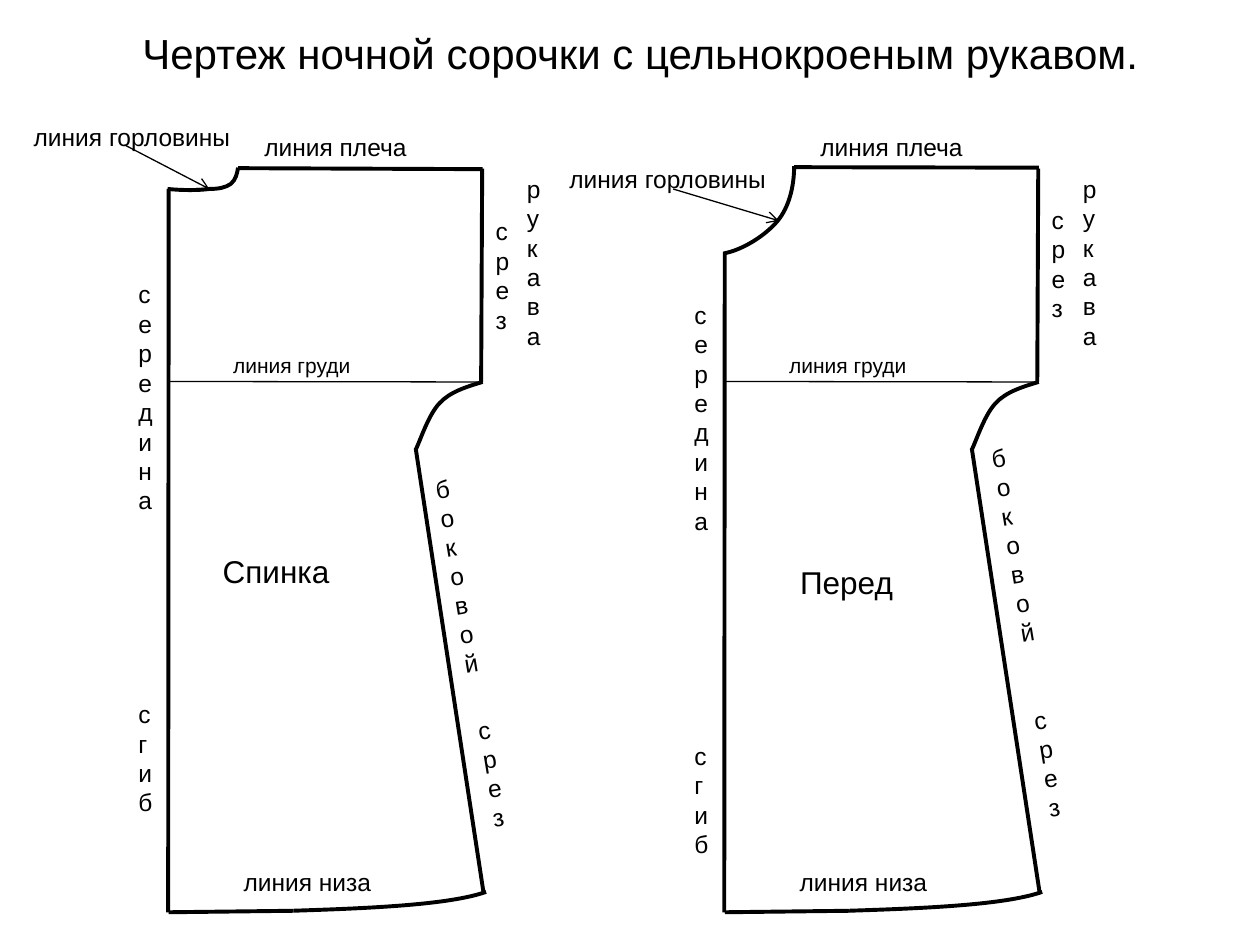
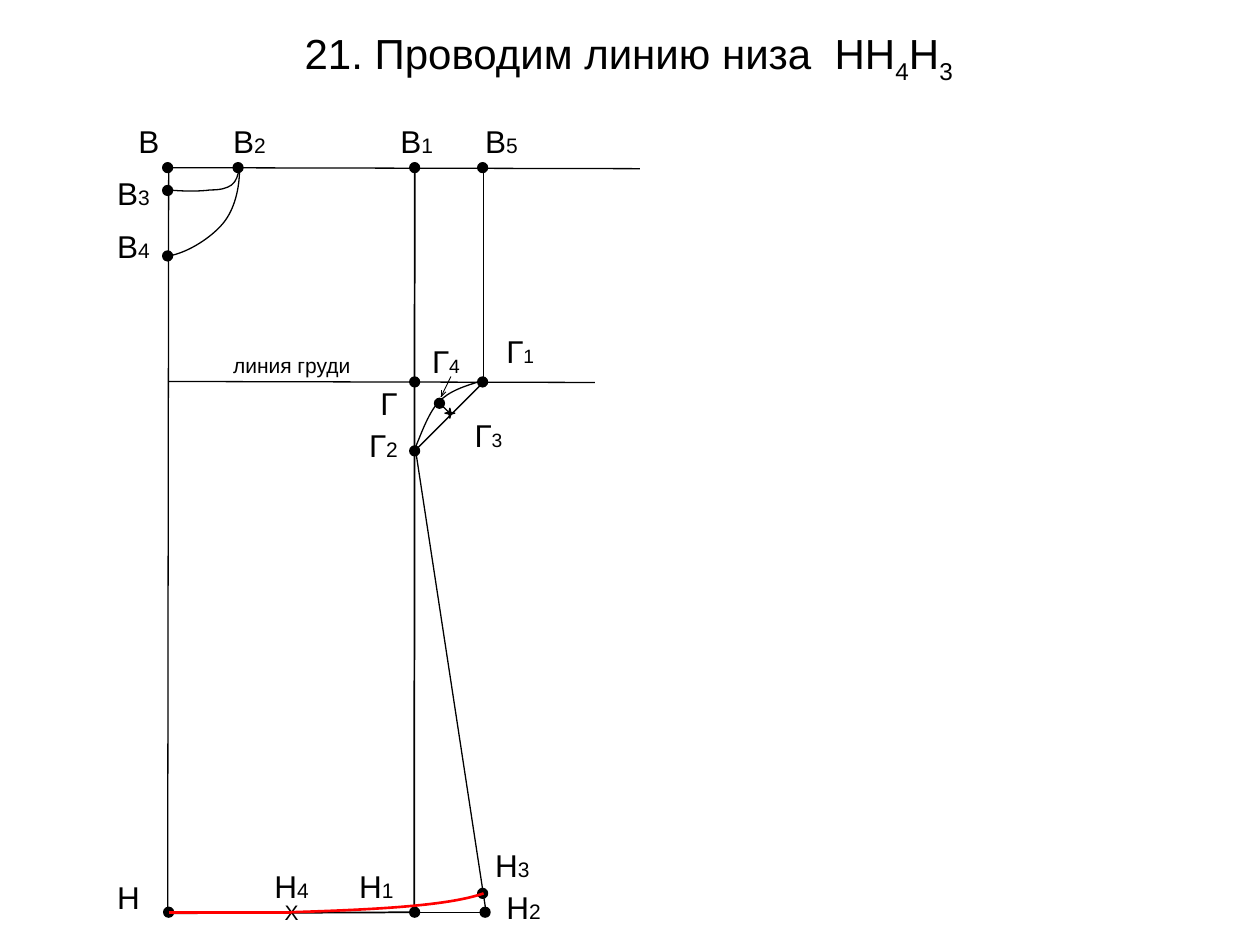
"""Draw the nightgown pattern pieces and the hem construction step."""
from lxml import etree
from pptx import Presentation
from pptx.dml.color import RGBColor
from pptx.enum.shapes import MSO_CONNECTOR as Connector, MSO_SHAPE as Preset
from pptx.enum.text import MSO_AUTO_SIZE as AutoSize, PP_ALIGN as Align
from pptx.oxml.ns import qn
from pptx.util import Cm, Pt

COLOURS = {"ink": "000000", "hem": "FF0000"}
FONT = "Arial"
THIN, MEDIUM, BOLD = 0.75, 1, 2.25
LABEL_HEIGHTS = {18: 1.02, 14: 0.86, 12: 0.76}
FRONT_SHIFT = 11.21

ARMHOLE = [(9.73, 7.70), (9.40, 7.80), (9.07, 7.90), (8.86, 8.13),
           (8.64, 8.36), (8.48, 8.86), (8.38, 9.07)]
HEM = [(5.92, 18.36), (7.49, 18.31), (9.07, 18.24), (9.80, 17.98)]
BACK_NECK = [(3.38, 3.81), (3.68, 3.84), (4.01, 3.84), (4.22, 3.81),
             (4.42, 3.81), (4.55, 3.78), (4.65, 3.71),
             (4.75, 3.63), (4.78, 3.51), (4.80, 3.38)]
FRONT_NECK = [(3.38, 5.11), (3.76, 5.04), (4.22, 4.75), (4.47, 4.45),
              (4.70, 4.17), (4.80, 3.75), (4.80, 3.35)]

PIECES = [
    dict(name="Спинка", name_at=(4.24, 11.00, 2.69), shift=0, neck=BACK_NECK,
         neck_label=(0.43, 2.34), neck_arrow=((2.51, 2.92), (4.22, 3.81)),
         shoulder=(3.39, 3.41), centre_top=3.81, middle_top=5.51, fold_top=13.97,
         cuff_top=4.24, side_top=9.37, cut_top=14.25),
    dict(name="Перед", name_at=(4.67, 11.23, 2.41), shift=FRONT_SHIFT, neck=FRONT_NECK,
         neck_label=(0.02, 3.18), neck_arrow=((2.36, 3.81), (4.49, 4.45)),
         shoulder=(3.37, 3.38), centre_top=5.08, middle_top=5.92, fold_top=14.81,
         cuff_top=4.01, side_top=8.74, cut_top=14.05),
]

POINTS = {
    "В": (3.38, 3.38), "В1": (8.36, 3.38), "В2": (4.80, 3.38), "В3": (3.38, 3.84),
    "В4": (3.38, 5.16), "В5": (9.73, 3.38), "Г": (8.36, 7.70), "Г1": (9.73, 7.70),
    "Г2": (8.36, 9.09), "Г4": (8.86, 8.13), "Н": (3.40, 18.39), "Н1": (8.36, 18.39),
    "Н2": (9.78, 18.39), "Н3": (9.73, 18.01),
}
POINT_LABELS = [
    ("В", "", 2.54, 2.34, 0.94, 12), ("В", "1", 7.82, 2.34, 1.22, 12),
    ("В", "2", 4.45, 2.34, 1.22, 12), ("В", "3", 2.11, 3.38, 1.22, 12),
    ("В", "4", 2.11, 4.45, 1.22, 12), ("В", "5", 9.53, 2.34, 1.22, 12),
    ("Г", "", 7.42, 7.62, 0.86, 12), ("Г", "1", 9.96, 6.56, 1.07, 11),
    ("Г", "2", 7.19, 8.46, 1.14, 12), ("Г", "3", 9.32, 8.26, 1.07, 11),
    ("Г", "4", 8.46, 6.78, 1.07, 11), ("Н", "", 2.11, 17.58, 0.97, 12),
    ("Н", "1", 6.99, 17.35, 1.24, 12), ("Н", "2", 9.96, 17.78, 1.24, 12),
    ("Н", "3", 9.73, 16.94, 1.24, 12), ("Н", "4", 5.28, 17.35, 1.24, 12),
]


class PatternDeck:
    """Hold the drawing style, the current slide and its sideways shift."""

    def __init__(self):
        """Open an empty deck of 4:3 slides."""
        self.deck = Presentation()
        self.deck.slide_width, self.deck.slide_height = Cm(25.4), Cm(19.05)
        self.slide = None
        self.shift = 0

    def new_slide(self, title, right_inset=0.25):
        """Start a slide with a centred title of (text, is subscript) parts."""
        self.slide = self.deck.slides.add_slide(self.deck.slide_layouts[6])
        self.shift = 0
        frame = self.text_box(1.06, 0.43, 23.7, 1.27, wrap=True)
        frame.margin_right = Cm(right_inset)
        heading = frame.paragraphs[0]
        heading.alignment = Align.CENTER
        self.style(heading.font, 24)
        for text, subscript in title:
            run = heading.add_run()
            run.text = text
            if subscript:
                run.font._element.set("baseline", "-25000")

    def colour(self, name):
        """Return the named colour."""
        return RGBColor.from_string(COLOURS[name])

    def style(self, font, size):
        """Set the shared typeface and colour at a size."""
        font.name, font.size = FONT, Pt(size)
        font.color.rgb = self.colour("ink")

    def stroke(self, outline, width, colour="ink"):
        """Set the colour and width of a line."""
        outline.color.rgb = self.colour(colour)
        outline.width = Pt(width)

    def text_box(self, x, y, width, height, wrap=False, rotation=0):
        """Add an empty text box and return its frame."""
        box = self.slide.shapes.add_textbox(Cm(x + self.shift), Cm(y), Cm(width), Cm(height))
        box.rotation = rotation
        frame = box.text_frame
        frame.word_wrap = wrap
        frame.auto_size = AutoSize.SHAPE_TO_FIT_TEXT
        return frame

    def label(self, text, x, y, width, size=14):
        """Write a single-line label."""
        paragraph = self.text_box(x, y, width, LABEL_HEIGHTS[size]).paragraphs[0]
        paragraph.text = text
        self.style(paragraph.font, size)

    def point_label(self, letter, index, x, y, width, index_size):
        """Write a point's letter with its smaller index."""
        paragraph = self.text_box(x, y, width, LABEL_HEIGHTS[18]).paragraphs[0]
        for text, size in ((letter, 18), (index, index_size)):
            if text:
                run = paragraph.add_run()
                run.text = text
                self.style(run.font, size)

    def column(self, lines, x, y, width, height, wrap=True, rotation=0):
        """Write a word downwards, one paragraph for each line."""
        frame = self.text_box(x, y, width, height, wrap, rotation)
        frame.text = "\n".join(lines)
        for paragraph in frame.paragraphs:
            self.style(paragraph.font, 14)

    def line(self, start, end, width=THIN, colour="ink", arrow=False):
        """Draw a straight line, with an arrowhead at its end if asked."""
        (x1, y1), (x2, y2) = start, end
        connector = self.slide.shapes.add_connector(
            Connector.STRAIGHT, Cm(x1 + self.shift), Cm(y1), Cm(x2 + self.shift), Cm(y2))
        self.stroke(connector.line, width, colour)
        if arrow:
            etree.SubElement(connector.line._get_or_add_ln(), qn("a:tailEnd"), type="arrow")
        etree.SubElement(connector._element.spPr, qn("a:effectLst"))

    def curve(self, nodes, width=THIN, colour="ink", offset=(0, 0)):
        """Draw an open outline of cubic curves, three nodes to a curve."""
        dx, dy = offset[0] + self.shift, offset[1]
        start, *rest = [(Cm(x + dx), Cm(y + dy)) for x, y in nodes]
        builder = self.slide.shapes.build_freeform(*start)
        builder.add_line_segments(rest, close=False)
        outline = builder.convert_to_shape()
        trace = outline._element.find(".//" + qn("a:path"))
        for i, segment in enumerate(trace.findall(qn("a:lnTo"))):
            if i % 3 == 0:
                cubic = etree.SubElement(trace, qn("a:cubicBezTo"))
            cubic.append(segment[0])
            trace.remove(segment)
        outline.fill.background()
        outline.shadow.inherit = False
        self.stroke(outline.line, width, colour)

    def mark(self, x, y, preset=Preset.OVAL, size=0.2):
        """Put a small solid mark centred on a point."""
        mark = self.slide.shapes.add_shape(
            preset, Cm(x - size / 2), Cm(y - size / 2), Cm(size), Cm(size))
        mark.shadow.inherit = False
        mark.fill.solid()
        mark.fill.fore_color.rgb = self.colour("ink")
        self.stroke(mark.line, THIN)

    def save(self):
        """Write the deck to disk."""
        self.deck.save("out.pptx")


def draw_piece(deck, piece):
    """Draw one pattern piece with the names of its edges."""
    deck.shift = piece["shift"]
    shoulder_start, shoulder_end = piece["shoulder"]
    deck.line((3.40, 7.69), (9.73, 7.70))
    for start, end in (
        ((3.40, 18.39), HEM[0]),
        ((4.80, shoulder_start), (9.73, shoulder_end)),
        ((9.72, 3.40), (9.70, 7.70)),
        ((8.38, 9.04), (9.75, 18.01)),
        ((3.40, piece["centre_top"]), (3.39, 18.39)),
    ):
        deck.line(start, end, BOLD)
    for nodes in (ARMHOLE, HEM, piece["neck"]):
        deck.curve(nodes, BOLD)

    deck.label(piece["name"], *piece["name_at"], size=18)
    deck.label("линия груди", 4.45, 6.98, 2.90, size=12)
    deck.label("линия плеча", 5.08, 2.54, 3.45)
    deck.label("линия низа", 4.66, 17.35, 3.15)
    deck.label("линия горловины", *piece["neck_label"], 4.55)
    deck.line(*piece["neck_arrow"], arrow=True)

    deck.column("середина", 2.54, piece["middle_top"], 1.19, 5.05)
    deck.column(["сгиб"], 2.54, piece["fold_top"], 0.79, 2.65)
    deck.column("срез", 9.74, piece["cuff_top"], 0.64, 2.65)
    deck.column("рукава", 10.37, 3.38, 0.79, 4.45, wrap=False)
    deck.column("боковой", 8.82, piece["side_top"], 1.19, 4.45, rotation=-9.4)
    deck.column("срез", 9.53, piece["cut_top"], 1.19, 2.65, rotation=-9.4)


def draw_hem_step(deck):
    """Draw the construction grid, its points and the red hem line."""
    for start, end, width in (
        ((3.40, 3.38), (3.38, 18.41), THIN),
        ((12.90, 3.40), (3.38, 3.38), THIN),
        ((8.36, 3.40), (8.35, 18.44), MEDIUM),
        ((8.38, 18.39), (3.38, 18.41), MEDIUM),
        ((3.40, 7.69), (11.99, 7.71), THIN),
        ((9.74, 3.38), (9.74, 7.70), THIN),
        ((9.75, 7.70), (8.36, 9.09), THIN),
        ((8.86, 8.13), (9.07, 8.33), THIN),
        ((8.36, 18.39), (9.80, 18.39), THIN),
        ((8.38, 9.09), (9.80, 18.39), THIN),
    ):
        deck.line(start, end, width)
    for start in ((9.09, 7.59), (8.89, 7.87), (8.99, 7.90)):
        deck.line(start, (8.89, 8.00), 0.5)
    deck.curve(BACK_NECK, offset=(0.02, 0.02))
    deck.curve(FRONT_NECK, offset=(0.03, 0.05))
    deck.curve(ARMHOLE, offset=(-0.02, -0.02))

    for x, y in POINTS.values():
        deck.mark(x, y)
    deck.mark(9.07, 8.33, Preset.STAR_4_POINT)
    for point_label in POINT_LABELS:
        deck.point_label(*point_label)
    deck.label("линия груди", 4.45, 6.98, 2.90, size=12)
    deck.label("Х", 5.49, 18.01, 0.79, size=12)

    deck.curve(HEM, 1.5, "hem", offset=(-0.05, 0.03))
    deck.line((3.40, 18.39), (5.87, 18.39), 1.5, "hem")


def main():
    """Build both slides and save them."""
    deck = PatternDeck()
    deck.new_slide([("Чертеж ночной сорочки с цельнокроеным рукавом.", False)])
    for piece in PIECES:
        draw_piece(deck, piece)
    deck.new_slide([("21. Проводим линию низа  НН", False), ("4", True),
                    ("Н", False), ("3", True)], right_inset=0.72)
    draw_hem_step(deck)
    deck.save()


if __name__ == "__main__":
    main()
